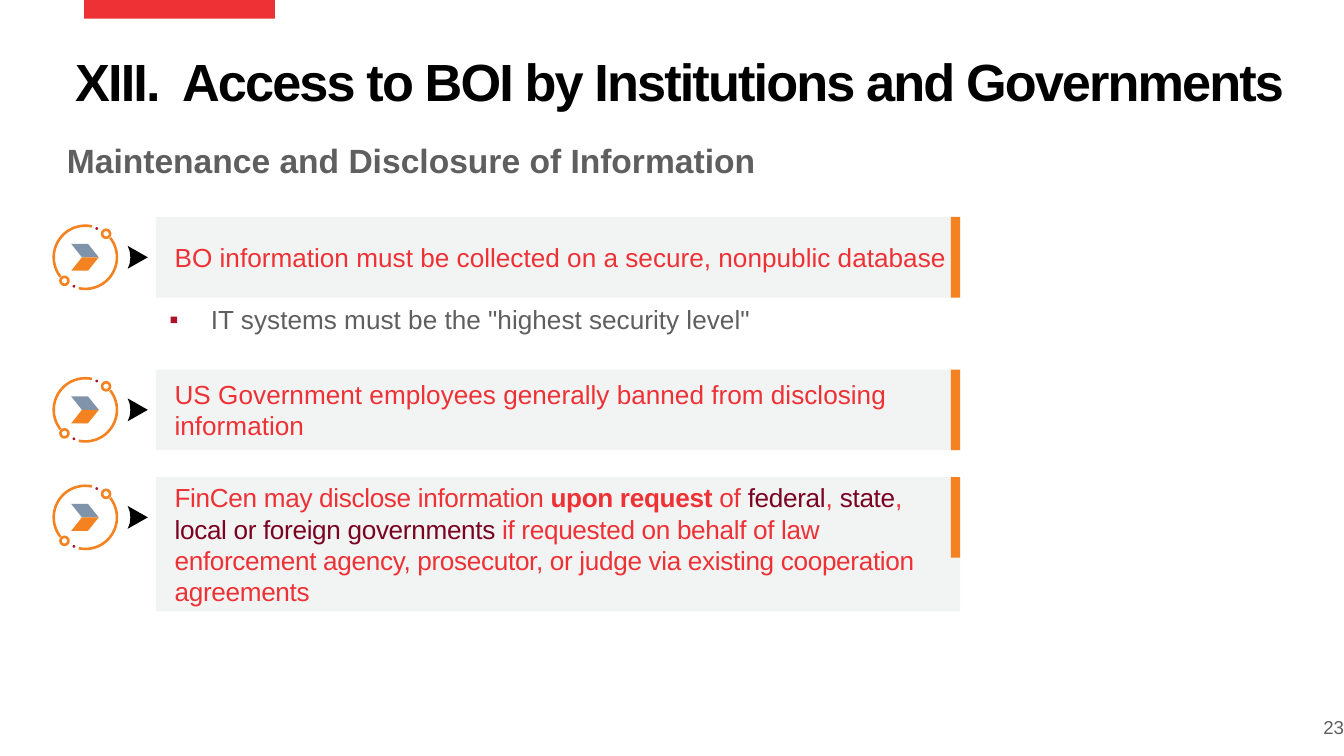
import dataclasses
import math

import pptx
import pptx.dml.color
import pptx.enum.shapes
import pptx.enum.text
import pptx.oxml
import pptx.oxml.ns
import pptx.shapes.autoshape
import pptx.slide
import pptx.text.text
import pptx.util

Anchor = pptx.enum.text.MSO_ANCHOR
Align = pptx.enum.text.PP_ALIGN
Preset = pptx.enum.shapes.MSO_SHAPE
Shape = pptx.shapes.autoshape.Shape
Slide = pptx.slide.Slide
Point = tuple[float, float]
Box = tuple[int, int, int, int]

EMU_PER_PX = 4572  # 200 px to the inch


@dataclasses.dataclass(frozen=True)
class Theme:
    font: str = "Arial"
    black: str = "000000"
    red: str = "EE3135"
    wine: str = "7A0223"
    crimson: str = "AE132A"
    orange: str = "F58220"
    slate: str = "7F93AA"
    grey: str = "5F5F5F"
    panel: str = "F2F3F3"
    title_size: int = 28
    subtitle_size: int = 18
    text_size: int = 14
    number_size: int = 10
    ring_width: float = 1.4


THEME = Theme()


@dataclasses.dataclass(frozen=True)
class TextRun:
    text: str
    color: str = THEME.red
    size: int = THEME.text_size
    bold: bool = False
    spacing: int = 0  # hundredths of a point


@dataclasses.dataclass(frozen=True)
class Card:
    top: int
    height: int
    lines: list[list[TextRun]]


def px(length: float) -> int:
    return round(length * EMU_PER_PX)


def rgb(color: str) -> pptx.dml.color.RGBColor:
    return pptx.dml.color.RGBColor.from_string(color)


def place(shape: Shape, box: Box) -> None:
    shape.left, shape.top, shape.width, shape.height = map(px, box)


def paint(shape: Shape, fill: str | None = None, line: str | None = None) -> None:
    shape.shadow.inherit = False
    if fill:
        shape.fill.solid()
        shape.fill.fore_color.rgb = rgb(fill)
    else:
        shape.fill.background()
    if line:
        shape.line.color.rgb = rgb(line)
        shape.line.width = pptx.util.Pt(THEME.ring_width)
    else:
        shape.line.fill.background()


def add_preset(slide: Slide, preset: Preset, box: Box, fill: str | None = None,
               line: str | None = None) -> Shape:
    shape = slide.shapes.add_shape(preset, *map(px, box))
    paint(shape, fill, line)
    return shape


def add_disc(slide: Slide, center: Point, radius: int, fill: str | None = None,
             line: str | None = None) -> None:
    x, y = center
    add_preset(slide, Preset.OVAL, (x - radius, y - radius, 2 * radius, 2 * radius), fill, line)


def add_outline(slide: Slide, center: Point, points: list[Point], fill: str | None = None,
                line: str | None = None) -> None:
    vertices = [(px(center[0] + x), px(center[1] + y)) for x, y in points]
    builder = slide.shapes.build_freeform(*vertices[0], scale=1.0)
    builder.add_line_segments(vertices[1:], close=fill is not None)
    paint(builder.convert_to_shape(), fill, line)


def add_run(paragraph: pptx.text.text._Paragraph, content: TextRun) -> None:
    run = paragraph.add_run()
    run.text = content.text
    run.font.name = THEME.font
    run.font.size = pptx.util.Pt(content.size)
    run.font.bold = content.bold
    run.font.color.rgb = rgb(content.color)
    if content.spacing:
        run._r.get_or_add_rPr().set("spc", str(content.spacing))


def write(shape: Shape, lines: list[list[TextRun]], margins: Box = (0, 0, 0, 0),
          anchor: Anchor = Anchor.TOP, align: Align = Align.LEFT) -> pptx.text.text._Paragraph:
    frame = shape.text_frame
    frame.word_wrap = True
    frame.auto_size = pptx.enum.text.MSO_AUTO_SIZE.NONE
    frame.vertical_anchor = anchor
    (frame.margin_left, frame.margin_top,
     frame.margin_right, frame.margin_bottom) = map(px, margins)
    paragraph = frame.paragraphs[0]
    paragraph.alignment = align
    paragraph.space_before = pptx.util.Pt(0)
    for index, line in enumerate(lines):
        if index:
            paragraph.add_line_break()
        for content in line:
            add_run(paragraph, content)
    return paragraph


def set_indent(paragraph: pptx.text.text._Paragraph, left: int, first: int) -> None:
    properties = paragraph._p.get_or_add_pPr()
    properties.set("marL", str(px(left)))
    properties.set("indent", str(px(first)))


def add_bullet(paragraph: pptx.text.text._Paragraph, character: str, color: str) -> None:
    namespace = pptx.oxml.ns.nsdecls("a")
    properties = paragraph._p.get_or_add_pPr()
    for xml in (f'<a:buClr {namespace}><a:srgbClr val="{color}"/></a:buClr>',
                f'<a:buFont {namespace} typeface="{THEME.font}"/>',
                f'<a:buChar {namespace} char="{character}"/>'):
        properties.append(pptx.oxml.parse_xml(xml))


def add_icon(slide: Slide, center: Point) -> None:
    x, y = center
    # Each half of the ring is the other one turned by 180 degrees
    for sign in (1, -1):
        angles = [math.radians(degree) for degree in range(-38, 103, 4)]
        arc = [(sign * 47 * math.cos(angle), sign * 47 * math.sin(angle)) for angle in angles]
        add_outline(slide, center, arc, line=THEME.orange)
        add_disc(slide, (x + sign * 31, y - sign * 35), 6, line=THEME.orange)
        add_disc(slide, (x + sign * 17, y - sign * 43), 2, fill=THEME.crimson)
    for edge, color in ((-20, THEME.slate), (20, THEME.orange)):
        add_outline(slide, center, [(-21, edge), (4, edge), (20, 0), (-5, 0)], fill=color)


def add_card(slide: Slide, card: Card) -> None:
    middle = card.top + 60
    add_icon(slide, (127, middle))
    panel = add_preset(slide, Preset.RECTANGLE, (232, card.top, 1197, card.height), THEME.panel)
    paragraph = write(panel, card.lines, (6, 6, 0, 6), Anchor.MIDDLE)
    set_indent(paragraph, 22, 0)
    add_preset(slide, Preset.RECTANGLE, (1415, card.top, 14, 120), THEME.orange)
    pointer = [(0, -17), (30, 0), (0, 17), (3, 9), (4, 0), (3, -9)]
    add_outline(slide, (190, middle), pointer, fill=THEME.black)


def tight(text: str, color: str = THEME.red, bold: bool = False) -> TextRun:
    return TextRun(text, color, bold=bold, spacing=-20)


CARDS = [
    Card(323, 120, [[TextRun("BO information must be collected on a secure, nonpublic database")]]),
    Card(550, 120, [[TextRun("US Government employees generally banned from disclosing ")],
                    [TextRun("information")]]),
    Card(710, 200, [[
        tight("FinCen may disclose information "), tight("upon request ", bold=True), tight("of "),
        tight("federal", THEME.wine), tight(", "), tight("state", THEME.wine), tight(", "),
        tight("local or foreign governments ", THEME.wine),
        tight("if requested on behalf of law enforcement agency, prosecutor, or judge "
              "via existing cooperation agreements")]]),
]


def main() -> None:
    presentation = pptx.Presentation()
    presentation.slide_width, presentation.slide_height = px(2000), px(1125)
    slide = presentation.slides.add_slide(presentation.slide_layouts[1])

    # Heading
    add_preset(slide, Preset.RECTANGLE, (125, 0, 284, 28), THEME.red)
    title = slide.shapes.title
    place(title, (112, 84, 1806, 98))
    heading = TextRun("XIII.  Access to BOI by Institutions and Governments",
                      THEME.black, THEME.title_size, True, -100)
    write(title, [[heading]]).line_spacing = 0.9
    subtitle = slide.shapes.add_textbox(*map(px, (80, 198, 1470, 80)))
    write(subtitle, [[TextRun("Maintenance and Disclosure of Information",
                              THEME.grey, THEME.subtitle_size, True)]], (20, 10, 20, 10))

    # Cards
    for card in CARDS:
        add_card(slide, card)

    # Bullet under the first card
    body = slide.placeholders[1]
    place(body, (232, 442, 1198, 68))
    paragraph = write(body, [[TextRun('IT systems must be the "highest security level"',
                                      THEME.grey)]], (20, 10, 20, 10))
    paragraph.space_after = pptx.util.Pt(3)
    set_indent(paragraph, 62, -62)
    add_bullet(paragraph, "▪", THEME.crimson)

    # Slide number
    number = slide.shapes.add_textbox(*map(px, (1822, 1060, 178, 44)))
    write(number, [[TextRun("23", THEME.grey, THEME.number_size)]],
          anchor=Anchor.MIDDLE, align=Align.RIGHT)

    presentation.save("out.pptx")


if __name__ == "__main__":
    main()
